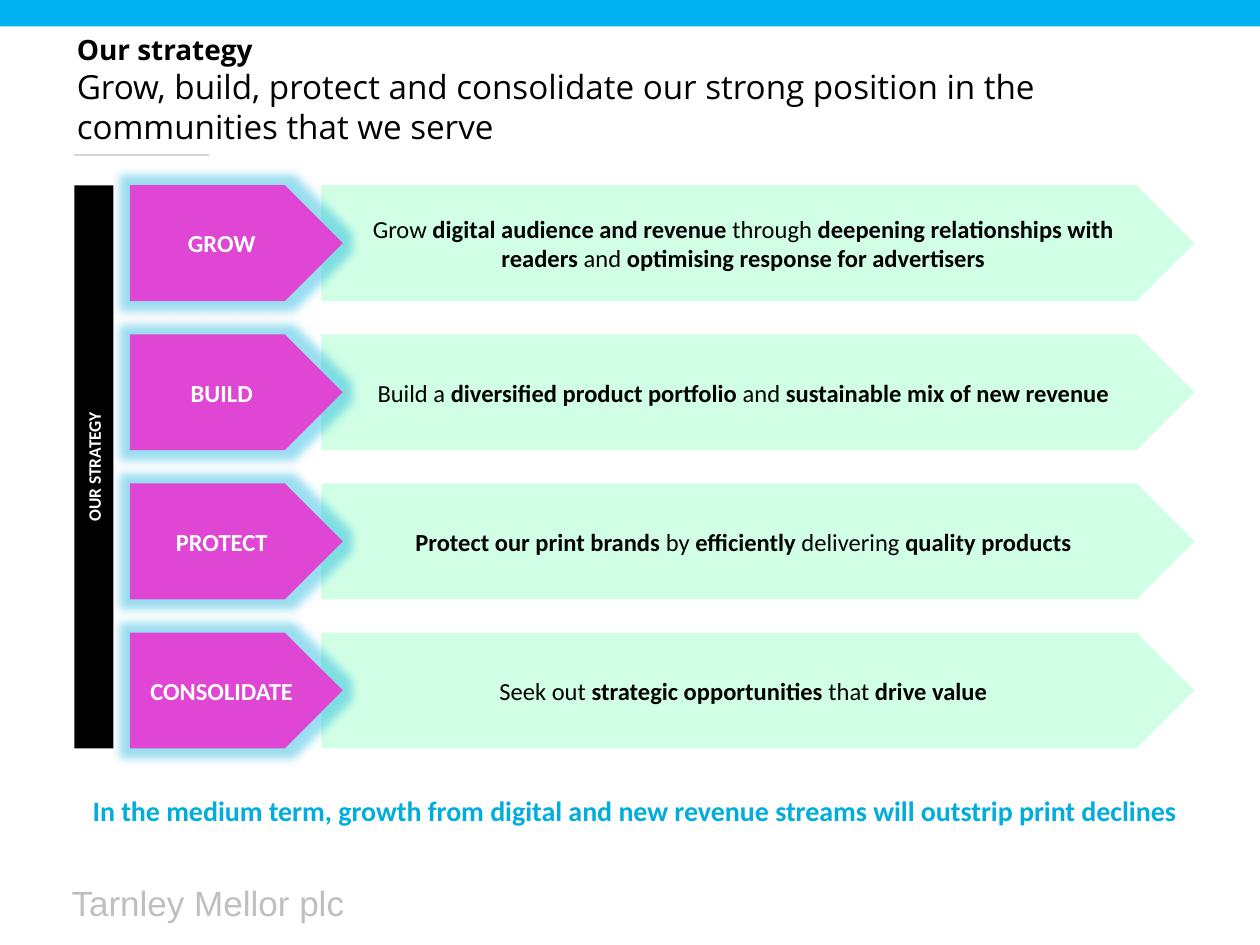
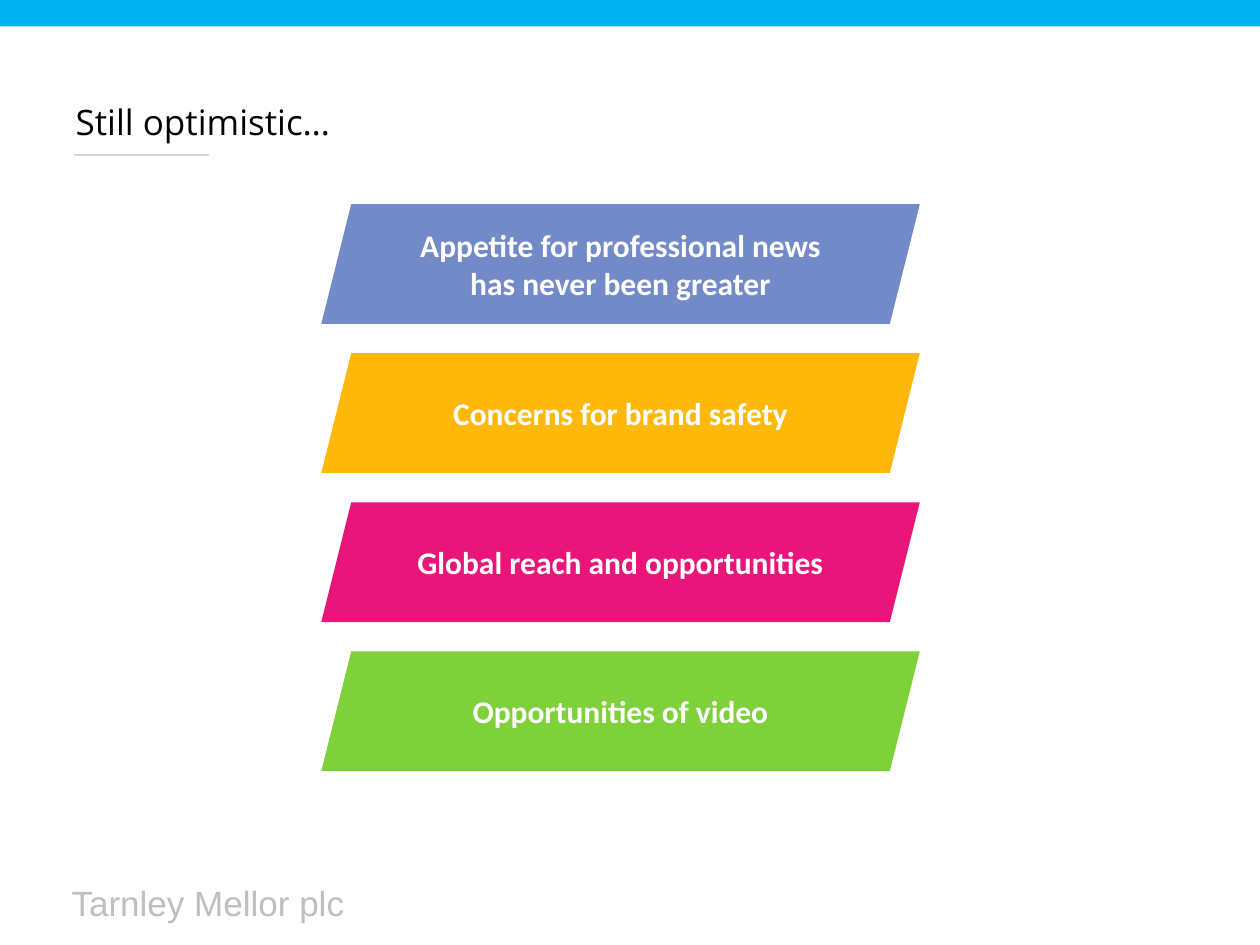
from dataclasses import dataclass

import pptx
import pptx.oxml
import pptx.util
from pptx.dml.color import RGBColor
from pptx.enum.shapes import MSO_CONNECTOR, MSO_SHAPE
from pptx.enum.text import MSO_ANCHOR, MSO_AUTO_SIZE, PP_ALIGN
from pptx.oxml.ns import nsdecls

Inches, Pt = pptx.util.Inches, pptx.util.Pt


@dataclass(frozen=True)
class Theme:
    band: str = "00B0F0"
    rule: str = "D6D6D6"
    footer: str = "BFBFBF"
    dark: str = "000000"
    light: str = "FFFFFF"
    accent: str = "00ADDC"
    label: str = "DE46D3"
    plate: str = "D1FFE6"
    reasons: tuple = ("738AC8", "FEB80A", "EA157A", "7FD13B")
    title_font: str = "Open Sans"
    body_font: str = "Calibri"
    footer_font: str = "Arial"
    kicker_size: int = 16
    subtitle_size: int = 19
    title_size: int = 20
    footer_size: int = 20
    side_size: int = 10
    body_size: int = 14
    closing_size: int = 16
    reason_size: int = 18


T = Theme()
FOOTER = "Tarnley Mellor plc"

STRATEGY = [
    ("GROW", "Grow *digital audience and revenue *through *deepening relationships "
             "with readers *and *optimising response for advertisers*"),
    ("BUILD", "Build a *diversified product portfolio *and "
              "*sustainable mix of new revenue*"),
    ("PROTECT", "*Protect our print brands *by *efficiently* delivering "
                "*quality products*"),
    ("CONSOLIDATE", "Seek out *strategic opportunities *that *drive value*"),
]
REASONS = [
    "Appetite for professional news has never been greater",
    "Concerns for brand safety",
    "Global reach and opportunities",
    "Opportunities of video",
]


def style(font, name, size, color, bold=False):
    font.name, font.size, font.bold = name, Pt(size), bold
    font.color.rgb = RGBColor.from_string(color)


def fill_text(shape, text, size, color, bold=False):
    """Centre text in a shape; stretches between asterisks switch bold on."""
    tf = shape.text_frame
    tf.word_wrap = True
    tf.vertical_anchor = MSO_ANCHOR.MIDDLE
    p = tf.paragraphs[0]
    p.alignment = PP_ALIGN.CENTER
    style(p.font, T.body_font, size, color, bold)
    for i, part in enumerate(text.split("*")):
        if part:
            r = p.add_run()
            r.text = part
            if i % 2:
                r.font.bold = True


def add_block(s, kind, box, fill):
    sp = s.shapes.add_shape(kind, *map(Inches, box))
    sp.shadow.inherit = False
    sp.fill.solid()
    sp.fill.fore_color.rgb = RGBColor.from_string(fill)
    sp.line.fill.background()
    return sp


def add_glow(sp):
    effects = sp.element.spPr.find(pptx.oxml.ns.qn("a:effectLst"))
    effects.append(pptx.oxml.parse_xml(
        f'<a:glow {nsdecls("a")} rad="{Pt(11)}"><a:srgbClr val="{T.accent}">'
        '<a:alpha val="40000"/></a:srgbClr></a:glow>'))


def stack(box, count, item_height):
    """Yield equal boxes spread from the top to the bottom of a box."""
    left, top, width, height = box
    step = (height - item_height) / (count - 1)
    for i in range(count):
        yield left, top + i * step, width, item_height


def furnish_layout(layout, s):
    """Draw the band, footer and title rule, then move them to the layout."""
    band = add_block(s, MSO_SHAPE.RECTANGLE, (0, 0, 10, 0.21), T.band)

    footer = s.shapes.add_textbox(*map(Inches, (0.47, 6.95, 4, 0.44)))
    tf = footer.text_frame
    tf.word_wrap = True
    p = tf.paragraphs[0]
    p.text = FOOTER
    style(p.font, T.footer_font, T.footer_size, T.footer)

    rule = s.shapes.add_connector(
        MSO_CONNECTOR.STRAIGHT, *map(Inches, (0.59, 1.23, 1.66, 1.23)))
    rule.line.color.rgb = RGBColor.from_string(T.rule)
    rule.line.width = Pt(0.75)
    rule.element.spPr.append(
        pptx.oxml.parse_xml(f'<a:effectLst {nsdecls("a")}/>'))

    for sp in (band, footer, rule):
        layout.shapes.element.append(sp.element)


def set_title(s, box, lines):
    """Fill the title with (text, size, bold) lines in one paragraph."""
    title = s.shapes.title
    title.left, title.top, title.width, title.height = map(Inches, box)
    tf = title.text_frame
    tf.word_wrap = True
    tf.auto_size = MSO_AUTO_SIZE.NONE
    tf.vertical_anchor = MSO_ANCHOR.BOTTOM
    p = tf.paragraphs[0]
    p.alignment = PP_ALIGN.LEFT
    for i, (text, size, bold) in enumerate(lines):
        if i:
            p.add_line_break()
        r = p.add_run()
        r.text = text
        style(r.font, T.title_font, size, T.dark, bold)


def add_side_bar(s, box, text):
    """Fill an upright box with a bar turned to read from bottom to top."""
    left, top, width, height = box
    shift = (height - width) / 2
    bar = add_block(s, MSO_SHAPE.RECTANGLE,
                    (left - shift, top + shift, height, width), T.dark)
    bar.rotation = 270
    fill_text(bar, text, T.side_size, T.light, bold=True)


def add_strategy_row(s, box, name, aim):
    left, top, width, height = box
    plate = add_block(s, MSO_SHAPE.PENTAGON,
                      (left + 1.52, top, width - 1.52, height), T.plate)
    tf = plate.text_frame
    tf.margin_left = tf.margin_right = Inches(0.2)
    fill_text(plate, aim, T.body_size, T.dark)

    label = add_block(s, MSO_SHAPE.PENTAGON, (left, top, 1.69, height), T.label)
    add_glow(label)
    fill_text(label, name, T.body_size, T.light, bold=True)


def build_strategy(s):
    set_title(s, (0.51, 0.36, 9, 0.85), [
        ("Our strategy", T.kicker_size, True),
        ("Grow, build, protect and consolidate our strong position in the "
         "communities that we serve", T.subtitle_size, False),
    ])
    top, height = 1.47, 4.47
    add_side_bar(s, (0.59, top, 0.31, height), "OUR STRATEGY")
    rows = stack((1.03, top, 8.45, height), len(STRATEGY), 0.92)
    for box, (name, aim) in zip(rows, STRATEGY):
        add_strategy_row(s, box, name, aim)
    closing = s.shapes.add_textbox(*map(Inches, (0.59, 6.2, 8.9, 0.47)))
    fill_text(closing, "In the medium term, growth from digital and new revenue "
              "streams will outstrip print declines",
              T.closing_size, T.accent, bold=True)


def build_optimism(s):
    set_title(s, (0.5, 0.33, 9, 0.85),
              [("Still optimistic…", T.title_size, False)])
    boxes = stack((2.55, 1.62, 4.75, 4.5), len(REASONS), 0.95)
    for box, reason, color in zip(boxes, REASONS, T.reasons):
        sp = add_block(s, MSO_SHAPE.PARALLELOGRAM, box, color)
        fill_text(sp, reason, T.reason_size, T.light, bold=True)


def main():
    prs = pptx.Presentation()
    prs.slide_width, prs.slide_height = Inches(10), Inches(7.5)
    layout = prs.slide_layouts.get_by_name("Title Only")
    slides = [prs.slides.add_slide(layout) for _ in range(2)]
    furnish_layout(layout, slides[0])
    for s, build in zip(slides, (build_strategy, build_optimism)):
        build(s)
    prs.save("out.pptx")


if __name__ == "__main__":
    main()
